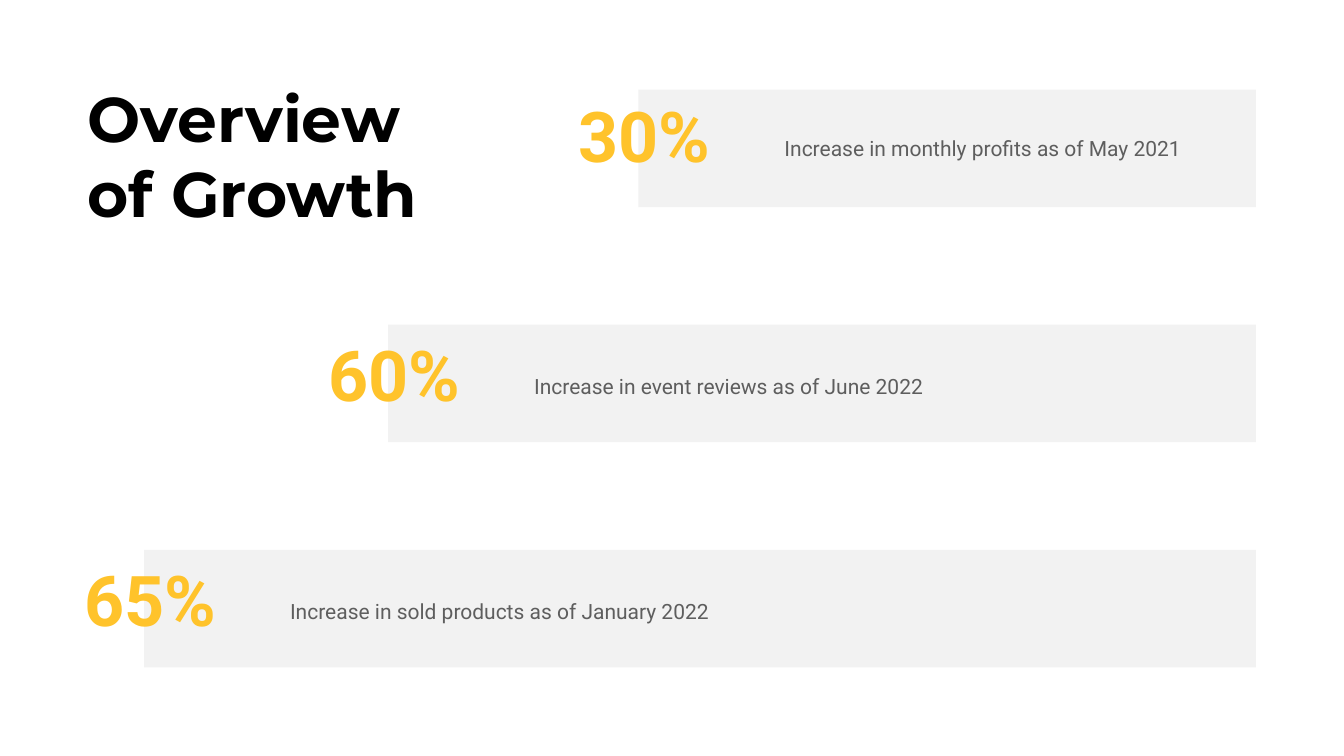
from lxml import etree
from pptx import Presentation
from pptx import util as u
from pptx.dml.color import RGBColor
from pptx.enum import shapes, text
from pptx.oxml import ns

BLACK = RGBColor(0x00, 0x00, 0x00)
GREY = RGBColor(0x5E, 0x5E, 0x5E)
GOLD = RGBColor(0xFF, 0xC3, 0x2B)
PALE = RGBColor(0xD5, 0xD5, 0xD5)
WHITE = RGBColor(0xFF, 0xFF, 0xFF)

# Font, paragraph and inset values for each kind of text
TITLE = dict(font=dict(name="Montserrat", size=u.Pt(90), bold=True), color=BLACK,
             para=dict(alignment=text.PP_ALIGN.LEFT, line_spacing=1.0), inset=0)
FIGURE = dict(font=dict(name="Roboto", size=u.Pt(100), bold=True), color=GOLD,
              para=dict(alignment=text.PP_ALIGN.LEFT, line_spacing=0.7), inset=0.15)
LABEL = dict(font=dict(name="Roboto", size=u.Pt(30), bold=False), color=GREY,
             para=dict(alignment=text.PP_ALIGN.JUSTIFY, line_spacing=1.2), inset=0.15)

# Bars share a right edge and a height
RIGHT, HIGH = 63.3, 5.92
# Bar left, bar top, figure top, figure, label
ROWS = [
    (32.18, 4.52, 5.11, "30%", "Increase in monthly profits as of May 2021"),
    (19.56, 16.36, 17.12, "60%", "Increase in event reviews as of June 2022"),
    (7.26, 27.71, 28.47, "65%", "Increase in sold products as of January 2022"),
]


class Deck:
    def __init__(self, wide, high):
        self.prs = Presentation()
        self.prs.slide_width, self.prs.slide_height = u.Cm(wide), u.Cm(high)
        self.slide = self.prs.slides.add_slide(self.prs.slide_layouts[5])
        fill = self.slide.background.fill
        fill.solid()
        fill.fore_color.rgb = WHITE

    def style(self, box, words, look):
        frame = box.text_frame
        inset = u.Cm(look["inset"])
        values = dict(word_wrap=True, auto_size=text.MSO_AUTO_SIZE.NONE,
                      vertical_anchor=text.MSO_ANCHOR.MIDDLE,
                      margin_left=inset, margin_right=inset,
                      margin_top=inset, margin_bottom=inset)
        frame.text = words
        para = frame.paragraphs[0]
        font = para.runs[0].font
        for item, group in ((frame, values), (para, look["para"]), (font, look["font"])):
            for key, value in group.items():
                setattr(item, key, value)
        font.color.rgb = look["color"]

    def title(self, words, *place):
        box = self.slide.shapes.title
        for key, value in zip(("left", "top", "width", "height"), place):
            setattr(box, key, u.Cm(value))
        self.style(box, words, TITLE)

    def label(self, words, look, *place):
        box = self.slide.shapes.add_textbox(*map(u.Cm, place))
        self.style(box, words, look)

    def bar(self, *place):
        bar = self.slide.shapes.add_shape(shapes.MSO_SHAPE.RECTANGLE, *map(u.Cm, place))
        bar.shadow.inherit = False
        bar.line.fill.background()
        bar.fill.solid()
        bar.fill.fore_color.rgb = PALE
        # 30% opacity
        tone = bar.element.spPr.find(ns.qn("a:solidFill"))[0]
        etree.SubElement(tone, ns.qn("a:alpha"), val="30000")


def main():
    deck = Deck(67.74, 38.1)
    deck.title("Overview of Growth", 4.42, 3.91, 16.71, 7.77)

    # One bar, figure and label per row
    for left, top, mark, figure, label in ROWS:
        deck.bar(left, top, RIGHT - left, HIGH)
        deck.label(figure, FIGURE, left - 3.16, mark, 8.64, 4.42)
        deck.label(label, LABEL, left + 7.21, mark + 1.45, 23.8, 1.52)

    deck.prs.save("out.pptx")


if __name__ == "__main__":
    main()
